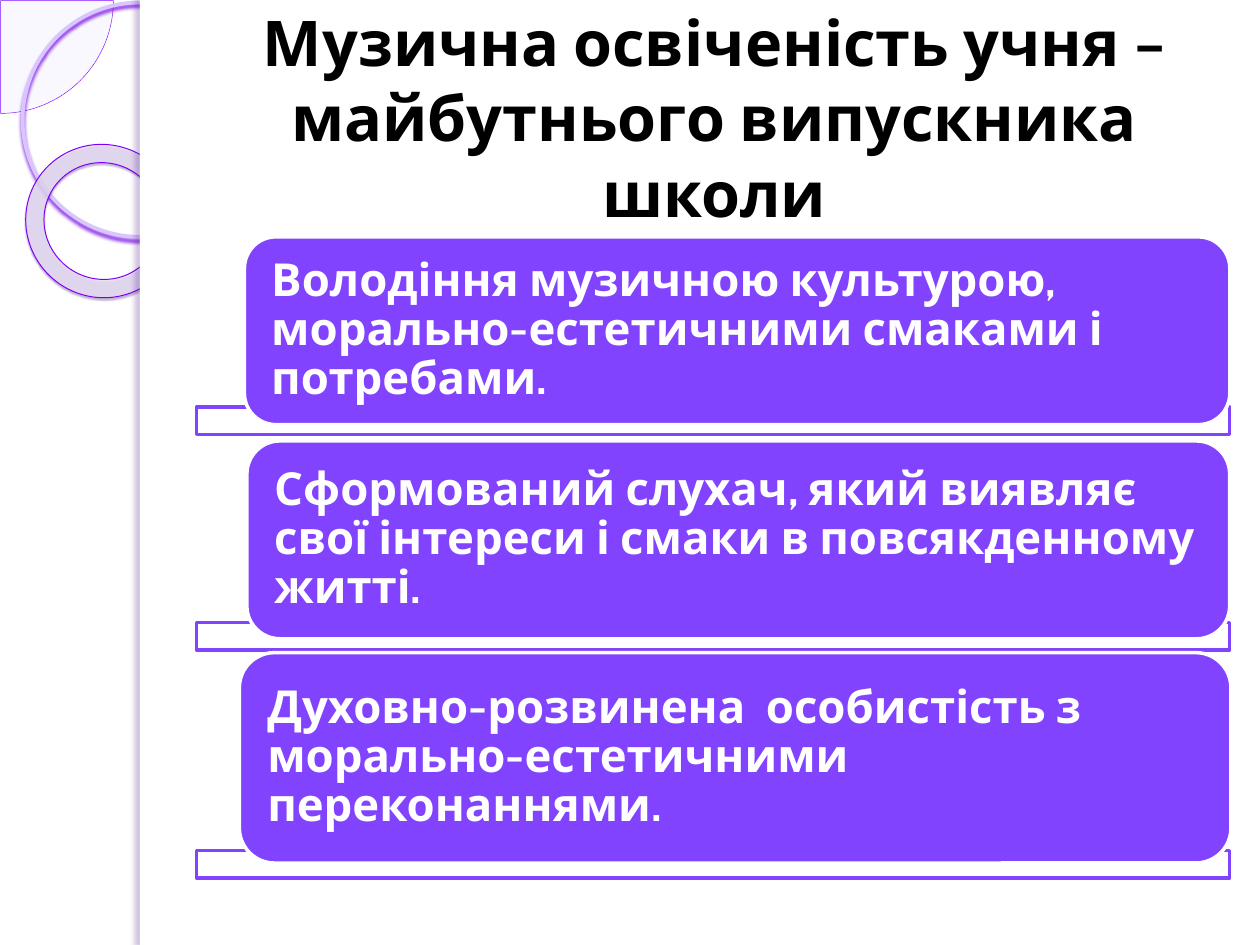
from lxml import etree
from pptx import Presentation
from pptx import util as u
from pptx.dml.color import RGBColor
from pptx.enum import shapes, text
from pptx.oxml.ns import qn

COLORS = {
    "white": "FFFFFF", "black": "000000", "violet": "8243FF",
    "pie": "F1EAFF", "pie_line": "8307FF",
    "ring_line": "D9C6FF", "ring_shadow": "7100E2",
    "donut": "E6DEF4", "donut_line": "7B00F5", "donut_shadow": "380070",
    "edge_shadow": "4C1484",
}
KINDS = shapes.MSO_SHAPE


class SlideBuilder:
    """Holds the style and the current slide."""

    font = "Cabin"

    def __init__(self, presentation):
        self.slide = presentation.slides.add_slide(presentation.slide_layouts[6])

    def shape(self, kind, box, fill=None, alpha=None, line=None, width=1,
              shadow=None, adjustments=(), rotation=0):
        shape = self.slide.shapes.add_shape(kind, *map(u.Inches, box))
        shape.shadow.inherit = False
        shape.rotation = rotation
        for index, value in enumerate(adjustments):
            shape.adjustments[index] = value
        if fill:
            shape.fill.solid()
            shape.fill.fore_color.rgb = RGBColor.from_string(COLORS[fill])
            if alpha:
                color = shape._element.spPr.find(qn("a:solidFill")).find(qn("a:srgbClr"))
                self.add_alpha(color, alpha)
        else:
            shape.fill.background()
        if line:
            shape.line.color.rgb = RGBColor.from_string(COLORS[line])
            shape.line.width = u.Pt(width)
        else:
            shape.line.fill.background()
        if shadow:
            self.add_shadow(shape, *shadow)
        return shape

    def add_alpha(self, color, percent):
        etree.SubElement(color, qn("a:alpha"), val=str(percent * 1000))

    def add_shadow(self, shape, color, alpha, blur, distance, angle):
        effects = shape._element.spPr.find(qn("a:effectLst"))
        outer = etree.SubElement(
            effects, qn("a:outerShdw"), blurRad=str(u.Pt(blur)),
            dist=str(u.Pt(distance)), dir=str(angle * 60000), rotWithShape="0")
        node = etree.SubElement(outer, qn("a:srgbClr"), val=COLORS[color])
        self.add_alpha(node, alpha)

    def set_text(self, shape, words, size, color, align, frame_format, spacing=1.0):
        frame = shape.text_frame
        frame_format = {"word_wrap": True,
                        "vertical_anchor": text.MSO_ANCHOR.MIDDLE, **frame_format}
        for name, value in frame_format.items():
            setattr(frame, name, value)
        paragraph = frame.paragraphs[0]
        paragraph.alignment = align
        paragraph.line_spacing = spacing
        run = paragraph.add_run()
        run.text = words
        for name, value in {"name": self.font, "size": u.Pt(size), "bold": True}.items():
            setattr(run.font, name, value)
        run.font.color.rgb = RGBColor.from_string(COLORS[color])

    def title(self, words, box):
        shape = self.slide.shapes.add_textbox(*map(u.Inches, box))
        self.set_text(shape, words, 36, "black", text.PP_ALIGN.CENTER, {})

    def card(self, words, box, bar_top):
        self.shape(KINDS.RECTANGLE, (1.56, bar_top, 8.2, 0.22), "white", 90, "violet", 2)
        card = self.shape(KINDS.ROUNDED_RECTANGLE, box, "violet", line="white", width=2)
        insets = {"margin_left": u.Inches(0.14), "margin_right": u.Inches(0.14),
                  "margin_top": 0, "margin_bottom": 0}
        self.set_text(card, words, 26, "white", text.PP_ALIGN.LEFT, insets, 0.9)


def main():
    presentation = Presentation()
    presentation.slide_width = u.Inches(10)
    presentation.slide_height = u.Inches(7.5)
    builder = SlideBuilder(presentation)

    # Circles on the left margin
    builder.shape(KINDS.PIE, (-0.89, -0.89, 1.79, 1.79), "pie", 33, "pie_line", 0.25,
                  adjustments=(0, 54))
    builder.shape(KINDS.OVAL, (0.18, 0.02, 1.86, 1.86), line="ring_line", width=2.15,
                  shadow=("ring_shadow", 85, 2, 2, 90))
    builder.shape(KINDS.DONUT, (0.2, 1.15, 1.23, 1.21), "donut", 80, "donut_line", 0.58,
                  ("donut_shadow", 35, 1, 1.2, 75), (0.12,), 38.6)

    # White page with a shaded left edge
    builder.shape(KINDS.RECTANGLE, (1.11, 0, 8.89, 7.5), "white")
    builder.shape(KINDS.RECTANGLE, (1.11, 0, 0.08, 7.5), "white",
                  shadow=("edge_shadow", 25, 3, 3, 180))

    # Title
    builder.title("Музична освіченість учня – майбутнього випускника школи",
                  (1.57, 0.3, 8.2, 1.25))

    # Cards, each over its own bar
    cards = [
        ("Володіння музичною культурою, морально-естетичними смаками і потребами.",
         (1.94, 1.88, 7.82, 1.49), 3.23),
        ("Сформований слухач, який виявляє свої інтереси і смаки в повсякденному житті.",
         (1.96, 3.5, 7.8, 1.57), 4.94),
        ("Духовно-розвинена  особистість з морально-естетичними переконаннями.",
         (1.9, 5.18, 7.87, 1.67), 6.75),
    ]
    for words, box, bar_top in cards:
        builder.card(words, box, bar_top)

    presentation.save("out.pptx")


if __name__ == "__main__":
    main()
